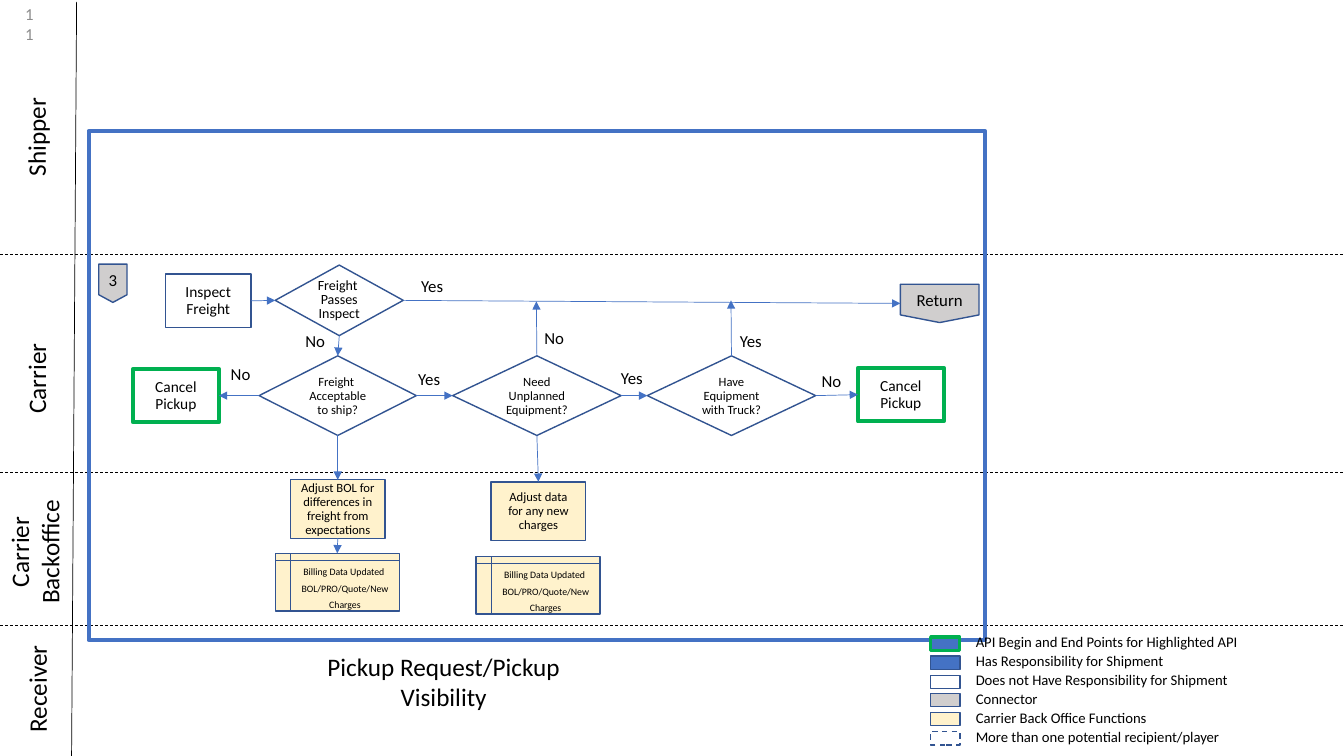
import dataclasses

import pptx
import pptx.dml.color
import pptx.enum.dml
import pptx.enum.shapes
import pptx.enum.text
import pptx.oxml
import pptx.oxml.ns
import pptx.util

PX = 9144  # EMU per px, 100 px to the inch
Preset = pptx.enum.shapes.MSO_SHAPE
Align = pptx.enum.text.PP_ALIGN
Anchor = pptx.enum.text.MSO_ANCHOR
TOP, LEFT, BOTTOM, RIGHT = range(4)  # connection sites


@dataclasses.dataclass(frozen=True)
class Theme:
    font: str = "Calibri"
    black: str = "000000"
    gray_text: str = "8C8C8C"
    white: str = "FFFFFF"
    blue: str = "4472C4"
    outline: str = "325491"
    green: str = "00B050"
    gray: str = "D0CECE"
    cream: str = "FFF2CC"
    heading: float = 18
    label: float = 12
    step: float = 11
    legend: float = 10.5
    decision: float = 10
    small: float = 9
    storage: float = 7
    hairline: float = 0.5
    thin: float = 1
    swatch_line: float = 2.25
    thick: float = 3


THEME = Theme()


def px(*values):
    return [round(value * PX) for value in values]


def rgb(value):
    return pptx.dml.color.RGBColor.from_string(value)


def write_text(shape, text, size, color=THEME.black, align=Align.LEFT, spacing=None):
    shape.text_frame.text = text
    for paragraph in shape.text_frame.paragraphs:
        paragraph.alignment = align
        if spacing:
            paragraph.line_spacing = pptx.util.Pt(spacing)
        for run in paragraph.runs:
            run.font.name = THEME.font
            run.font.size = pptx.util.Pt(size)
            run.font.color.rgb = rgb(color)


def add_text(slide, box, text, size, color=THEME.black, align=Align.LEFT,
             wrap=True, rotation=0, anchor=Anchor.TOP):
    shape = slide.shapes.add_textbox(*px(*box))
    shape.rotation = rotation
    shape.text_frame.word_wrap = wrap
    shape.text_frame.vertical_anchor = anchor
    write_text(shape, text, size, color, align)


def add_box(slide, preset, box, fill, line=THEME.outline, width=THEME.thin, dashed=False):
    shape = slide.shapes.add_shape(preset, *px(*box))
    shape.shadow.inherit = False
    if fill:
        shape.fill.solid()
        shape.fill.fore_color.rgb = rgb(fill)
    else:
        shape.fill.background()
    shape.line.color.rgb = rgb(line)
    shape.line.width = pptx.util.Pt(width)
    if dashed:
        shape.line.dash_style = pptx.enum.dml.MSO_LINE.DASH
    return shape


def add_node(slide, preset, box, text, size, spacing=None, fill=THEME.white, **outline):
    """Add a flowchart shape with centred text."""
    shape = add_box(slide, preset, box, fill, **outline)
    shape.text_frame.word_wrap = True
    shape.text_frame.vertical_anchor = Anchor.MIDDLE
    write_text(shape, text, size, align=Align.CENTER, spacing=spacing)
    return shape


def add_line(slide, start, end, color=THEME.black, dashed=False):
    line = slide.shapes.add_connector(
        pptx.enum.shapes.MSO_CONNECTOR.STRAIGHT, *px(*start, *end))
    line.line.color.rgb = rgb(color)
    line.line.width = pptx.util.Pt(THEME.hairline)
    if dashed:
        line.line.dash_style = pptx.enum.dml.MSO_LINE.DASH
    properties = line._element.spPr
    properties.append(pptx.oxml.parse_xml(
        f"<a:effectLst {pptx.oxml.ns.nsdecls('a')}/>"))
    return line


def add_arrow(slide, source, source_site, target=None, target_site=None, end=(0, 0)):
    """Run an arrow from a shape to another shape, or to a free end point."""
    arrow = add_line(slide, (0, 0), end, THEME.blue)
    arrow.begin_connect(source, source_site)
    if target is not None:
        arrow.end_connect(target, target_site)
    arrow.line._get_or_add_ln().append(pptx.oxml.parse_xml(
        f"<a:tailEnd {pptx.oxml.ns.nsdecls('a')} type='triangle'/>"))


def add_lanes(slide):
    for y in (252, 469, 620):
        add_line(slide, (0, y), (1333, y), dashed=True)
    add_line(slide, (76, 2), (71, 750))
    for box, name in (
        ((-14, 115, 99, 40), "Shipper"),
        ((-14, 350, 100, 40), "Carrier"),
        ((-32, 512, 133, 71), "Carrier Backoffice"),
        ((-20, 660, 113, 40), "Receiver"),
    ):
        align = Align.CENTER if " " in name else Align.LEFT
        add_text(slide, box, name, THEME.heading, align=align, rotation=270)


def add_flow(slide):
    process, decision = Preset.FLOWCHART_PROCESS, Preset.FLOWCHART_DECISION
    offpage = Preset.FLOWCHART_OFFPAGE_CONNECTOR
    add_node(slide, offpage, (98, 262, 28, 38), "3", THEME.label, fill=THEME.gray)
    returning = add_node(slide, offpage, (893, 282, 78, 38), "Return", THEME.label,
                         fill=THEME.gray)
    inspect = add_node(slide, process, (164, 272, 85, 53), "Inspect Freight",
                       THEME.step, 12)
    passes = add_node(slide, decision, (273, 263, 127, 70),
                      "Freight \nPasses Inspect", THEME.decision, 10)
    acceptable, unplanned, equipped = [
        add_node(slide, decision, (x, 353, width, 79), text, THEME.small, 10)
        for x, width, text in (
            (257, 156, "Freight \nAcceptable to ship?"),
            (449, 167, "Need Unplanned Equipment?"),
            (642, 167, "Have Equipment with Truck?"),
        )]
    cancel_left, cancel_right = [
        add_node(slide, process, (x, y, 85, 53), "Cancel\nPickup", THEME.step, 12,
                 line=THEME.green, width=THEME.thick)
        for x, y in ((132, 366), (851, 365))]
    adjust_bol, adjust_data = [
        add_node(slide, process, (x, y, 94, 58), text, THEME.small, 10, THEME.cream)
        for x, y, text in (
            (288, 476, "Adjust BOL for differences in freight from expectations"),
            (487, 478, "Adjust data for any new charges"),
        )]
    billing, _ = [
        add_node(slide, Preset.FLOWCHART_INTERNAL_STORAGE, (x, y, 123, 57),
                 "Billing Data Updated \nBOL/PRO/Quote/New Charges",
                 THEME.storage, 12, THEME.cream)
        for x, y in ((273, 549), (472, 552))]

    for link in (
        (inspect, RIGHT, passes, LEFT),
        (passes, RIGHT, returning, LEFT),
        (passes, BOTTOM, acceptable, TOP),
        (acceptable, LEFT, cancel_left, RIGHT),
        (acceptable, RIGHT, unplanned, LEFT),
        (unplanned, RIGHT, equipped, LEFT),
        (equipped, RIGHT, cancel_right, LEFT),
        (acceptable, BOTTOM, adjust_bol, TOP),
        (unplanned, BOTTOM, adjust_data, TOP),
        (adjust_bol, BOTTOM, billing, TOP),
    ):
        add_arrow(slide, *link)
    add_arrow(slide, unplanned, TOP, end=(532, 299))
    add_arrow(slide, equipped, TOP, end=(725, 298))

    for answer, places in (
        ("Yes", ((408, 269), (405, 361), (606, 360), (724, 323))),
        ("No", ((293, 323), (219, 356), (530, 320), (805, 363))),
    ):
        for x, y in places:
            add_text(slide, (x, y, 43, 30), answer, THEME.label, wrap=False)


def add_legend(slide):
    entries = (
        ("API Begin and End Points for Highlighted API", THEME.blue,
         {"line": THEME.green, "width": THEME.swatch_line}),
        ("Has Responsibility for Shipment", THEME.blue, {}),
        ("Does not Have Responsibility for Shipment", THEME.white, {}),
        ("Connector", THEME.gray, {}),
        ("Carrier Back Office Functions", THEME.cream, {}),
        ("More than one potential recipient/player", None, {"dashed": True}),
    )
    for row, (text, fill, outline) in enumerate(entries):
        y = 632 + round(18.8 * row)
        add_box(slide, Preset.RECTANGLE, (923, y, 29, 13), fill, **outline)
        add_text(slide, (958, y - 9, 300, 28), text, THEME.legend)


def main():
    presentation = pptx.Presentation()
    presentation.slide_width, presentation.slide_height = px(1333, 750)
    slide = presentation.slides.add_slide(presentation.slide_layouts[6])
    add_lanes(slide)
    add_flow(slide)
    add_text(slide, (15, 4, 28, 40), "11", THEME.label, THEME.gray_text,
             Align.RIGHT, anchor=Anchor.MIDDLE)
    add_box(slide, Preset.RECTANGLE, (88, 130, 889, 505), None, THEME.blue, THEME.thick)
    add_text(slide, (314, 641, 252, 71), "Pickup Request/Pickup Visibility",
             THEME.heading, align=Align.CENTER)
    add_legend(slide)
    presentation.save("out.pptx")


if __name__ == "__main__":
    main()
